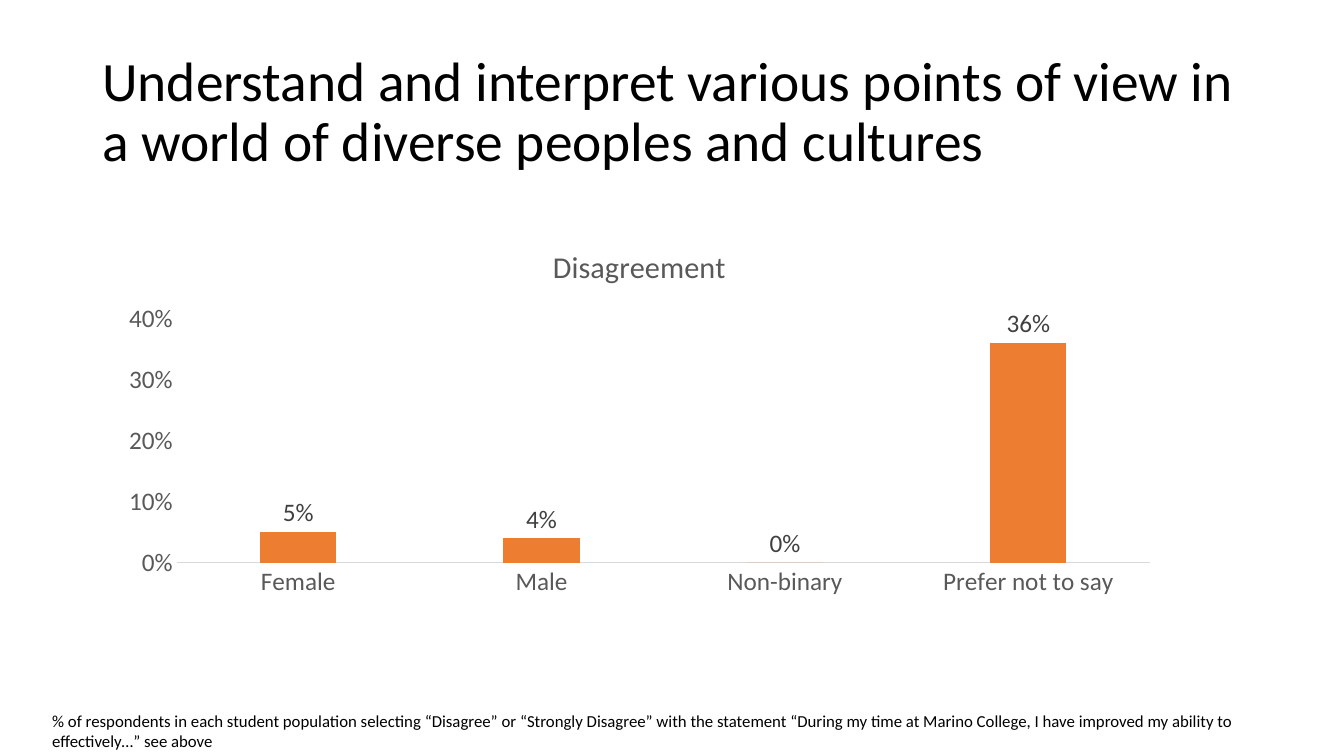
"""Build a slide with a column chart of disagreement by gender."""
from pptx import Presentation
from pptx import util as u
from pptx.chart.data import CategoryChartData
from pptx.dml.color import RGBColor
from pptx.enum import chart as ch, text

Pt = u.Pt


def style_font(font, size, color):
    font.name, font.size, font.bold = "Calibri", Pt(size), False
    font.color.rgb = RGBColor.from_string(color)


prs = Presentation()
prs.slide_width, prs.slide_height = Pt(960), Pt(540)
s = prs.slides.add_slide(prs.slide_layouts[6])

texts = [
    ("Understand and interpret various points of view in a world of diverse peoples and cultures",
     (66, 28.8, 828, 104.4), 39.6, 0.9, text.MSO_ANCHOR.MIDDLE),
    ("% of respondents in each student population selecting “Disagree” or “Strongly Disagree” "
     "with the statement “During my time at Marino College, I have improved my ability to "
     "effectively…” see above",
     (30.2, 504, 899.3, 36), 12, 1.0, text.MSO_ANCHOR.TOP),
]
for words, box, size, spacing, anchor in texts:
    tf = s.shapes.add_textbox(*map(Pt, box)).text_frame
    tf.word_wrap = True
    tf.vertical_anchor = anchor
    p = tf.paragraphs[0]
    p.line_spacing = spacing
    r = p.add_run()
    r.text = words
    style_font(r.font, size, "000000")

data = CategoryChartData(number_format="0%")
data.categories = ["Female", "Male", "Non-binary", "Prefer not to say"]
data.add_series("Disagreement", [0.05, 0.04, 0, 0.36])
chart = s.shapes.add_chart(ch.XL_CHART_TYPE.COLUMN_CLUSTERED,
                           Pt(77), Pt(162), Pt(759.6), Pt(270), data).chart
style_font(chart.font, 18, "000000")
chart.has_legend = False
chart.has_title = True
r = chart.chart_title.text_frame.paragraphs[0].add_run()
r.text = "Disagreement"
style_font(r.font, 21.6, "595959")
chart.chart_title.include_in_layout = False

for axis in (chart.category_axis, chart.value_axis):
    axis.has_major_gridlines = False
    axis.major_tick_mark = axis.minor_tick_mark = ch.XL_TICK_MARK.NONE
    style_font(axis.tick_labels.font, 18, "595959")
line = chart.category_axis.format.line
line.color.rgb = RGBColor.from_string("D9D9D9")
line.width = Pt(0.75)
values = chart.value_axis
values.format.line.fill.background()
values.minimum_scale, values.maximum_scale, values.major_unit = 0, 0.4, 0.1
values.tick_labels.number_format = "0%"
values.tick_labels.number_format_is_linked = False

plot = chart.plots[0]
plot.gap_width, plot.overlap = 219, -27
plot.vary_by_categories = False
bars = plot.series[0]
bars.invert_if_negative = False
bars.format.fill.solid()
bars.format.fill.fore_color.rgb = RGBColor.from_string("ED7D31")
labels = bars.data_labels
labels.show_value = True
labels.position = ch.XL_LABEL_POSITION.OUTSIDE_END
labels.number_format = "0%"
labels.number_format_is_linked = False
style_font(labels.font, 18, "404040")

prs.save("out.pptx")
